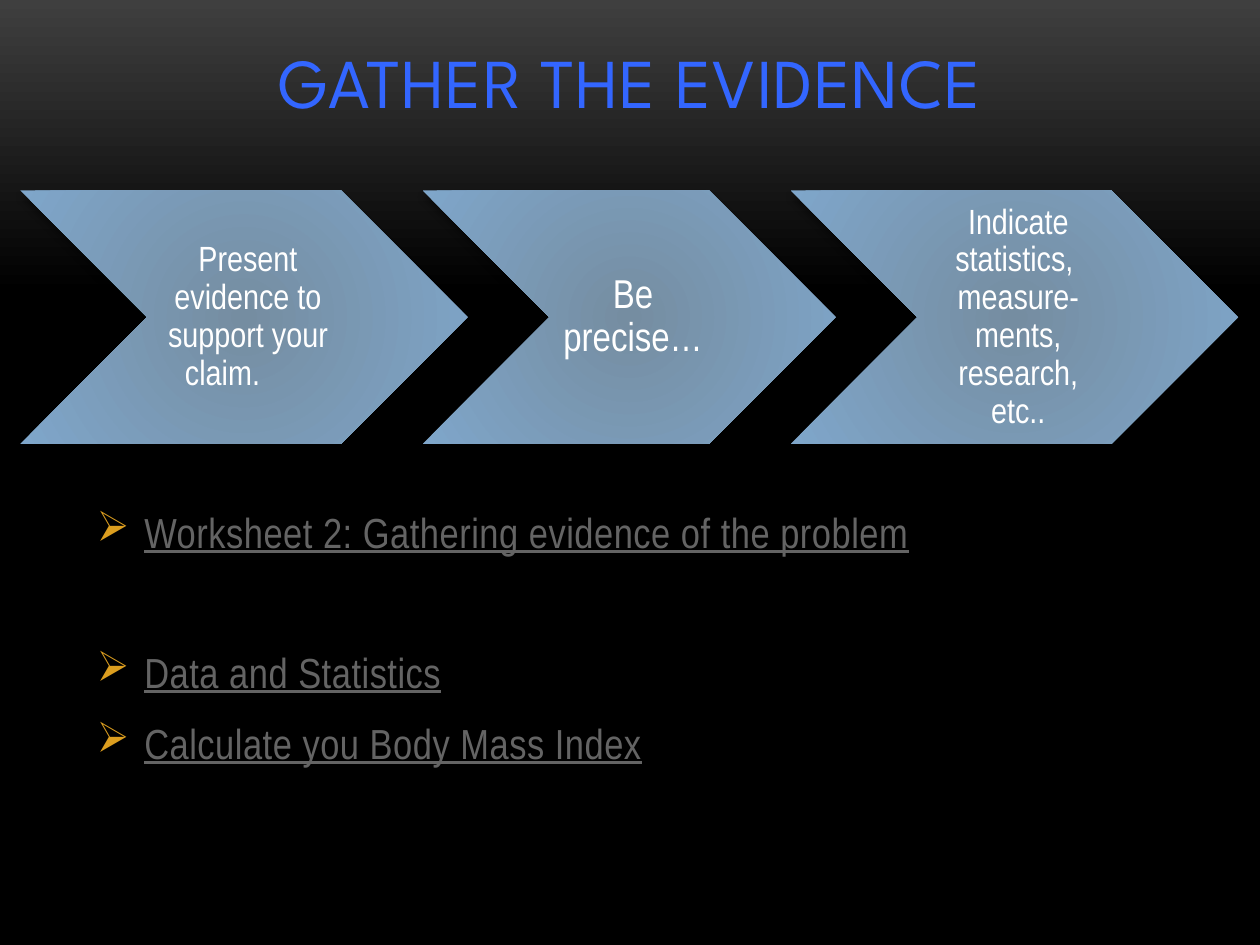
"""Build the "Gather the evidence" slide with three chevrons and a list of links."""
import lxml.etree
import pptx
import pptx.dml.color
import pptx.enum.shapes
import pptx.enum.text
import pptx.oxml
import pptx.oxml.ns
import pptx.util

Cm, Pt = pptx.util.Cm, pptx.util.Pt
qn = pptx.oxml.ns.qn
CENTER = pptx.enum.text.PP_ALIGN.CENTER
NO_FIT = pptx.enum.text.MSO_AUTO_SIZE.NONE


def rgb(value):
    """Return the colour for a hex string."""
    return pptx.dml.color.RGBColor.from_string(value)


def apply(target, values):
    """Set each named attribute of the target."""
    for name, value in values.items():
        setattr(target, name, value)


deck = pptx.Presentation()
apply(deck, {"slide_width": Cm(25.4), "slide_height": Cm(19.05)})
slide = deck.slides.add_slide(deck.slide_layouts[5])

backdrop = slide.background.fill
backdrop.gradient()
backdrop.gradient_angle = 270
for stop, (position, color) in zip(backdrop.gradient_stops, [(0, "3F3F3F"), (0.31, "000000")]):
    stop.position = position
    stop.color.rgb = rgb(color)

heading = slide.shapes.title
apply(heading, {"left": Cm(1.7), "top": Cm(0.76), "width": Cm(22.02), "height": Cm(3.18)})
apply(heading.text_frame, {
    "text": "GATHER THE EVIDENCE", "auto_size": NO_FIT, "word_wrap": True,
    "vertical_anchor": pptx.enum.text.MSO_ANCHOR.BOTTOM, "margin_bottom": Cm(1.47)})
heading_line = heading.text_frame.paragraphs[0]
heading_line.alignment = CENTER
heading_run = heading_line.runs[0]
apply(heading_run.font, {"name": "League Spartan", "size": Pt(40)})
heading_run.font.color.rgb = rgb("3366FF")
heading_run.font._element.set("spc", "50")

shadow_xml = (
    '<a:outerShdw xmlns:a="http://schemas.openxmlformats.org/drawingml/2006/main" '
    'blurRad="50800" dist="43180" dir="5400000" rotWithShape="0">'
    '<a:srgbClr val="000000"><a:alpha val="40000"/></a:srgbClr></a:outerShdw>')
steps = [
    ("Present evidence to support your claim.\t", 9.02, 20),
    ("Be precise…", 8.33, 23),
    ("Indicate statistics,  measure-ments, research, etc..", 9.02, 20),
]
step_left = 0.41
for wording, width, size in steps:
    step = slide.shapes.add_shape(
        pptx.enum.shapes.MSO_SHAPE.CHEVRON, Cm(step_left), Cm(3.84), Cm(width), Cm(5.11))
    step_left += width - 0.91
    step.line.fill.background()
    step.fill.gradient()
    for stop, (position, color) in zip(step.fill.gradient_stops, [(0, "758DA1"), (1, "7FA6CA")]):
        stop.position = position
        stop.color.rgb = rgb(color)
    gradient = step._element.spPr.find(qn("a:gradFill"))
    gradient.remove(gradient.find(qn("a:lin")))
    radial = lxml.etree.SubElement(gradient, qn("a:path"), {"path": "circle"})
    lxml.etree.SubElement(radial, qn("a:fillToRect"), dict.fromkeys("ltrb", "100000"))
    step.shadow.inherit = False
    step._element.spPr.find(qn("a:effectLst")).append(pptx.oxml.parse_xml(shadow_xml))
    apply(step.text_frame, {
        "text": wording, "word_wrap": True, "margin_left": Cm(0.24), "margin_right": Cm(0.08),
        "margin_top": Cm(0.08), "margin_bottom": Cm(0.08),
        "vertical_anchor": pptx.enum.text.MSO_ANCHOR.MIDDLE})
    step_line = step.text_frame.paragraphs[0]
    apply(step_line, {"alignment": CENTER, "line_spacing": 0.9})
    apply(step_line.font, {"name": "Arial Narrow", "size": Pt(size)})
    step_line.font.color.rgb = rgb("FFFFFF")

resources = slide.shapes.add_textbox(Cm(1.7), Cm(8.89), Cm(22.02), Cm(6.99)).text_frame
apply(resources, {"word_wrap": True, "margin_top": Cm(1.32)})
entries = [
    ("Worksheet 2: Gathering evidence of the problem", 0),
    ("Data and Statistics", 45),
    ("Calculate you Body Mass Index", 5.8),
]
for index, (wording, gap) in enumerate(entries):
    entry = resources.add_paragraph() if index else resources.paragraphs[0]
    properties = entry._p.get_or_add_pPr()
    properties.set("marL", str(Cm(0.96)))
    properties.set("indent", str(-Cm(0.96)))
    bullet_color = lxml.etree.SubElement(properties, qn("a:buClr"))
    lxml.etree.SubElement(bullet_color, qn("a:srgbClr"), {"val": "DC9E1F"})
    lxml.etree.SubElement(properties, qn("a:buChar"), {"char": "➢"})
    apply(entry, {"space_before": Pt(gap), "space_after": Pt(6)})
    link = entry.add_run()
    link.text = wording
    apply(link.font, {"name": "Arial Narrow", "size": Pt(24), "underline": True})
    link.font.color.rgb = rgb("646464")
    link.font._element.set("spc", "30")

deck.save("out.pptx")
